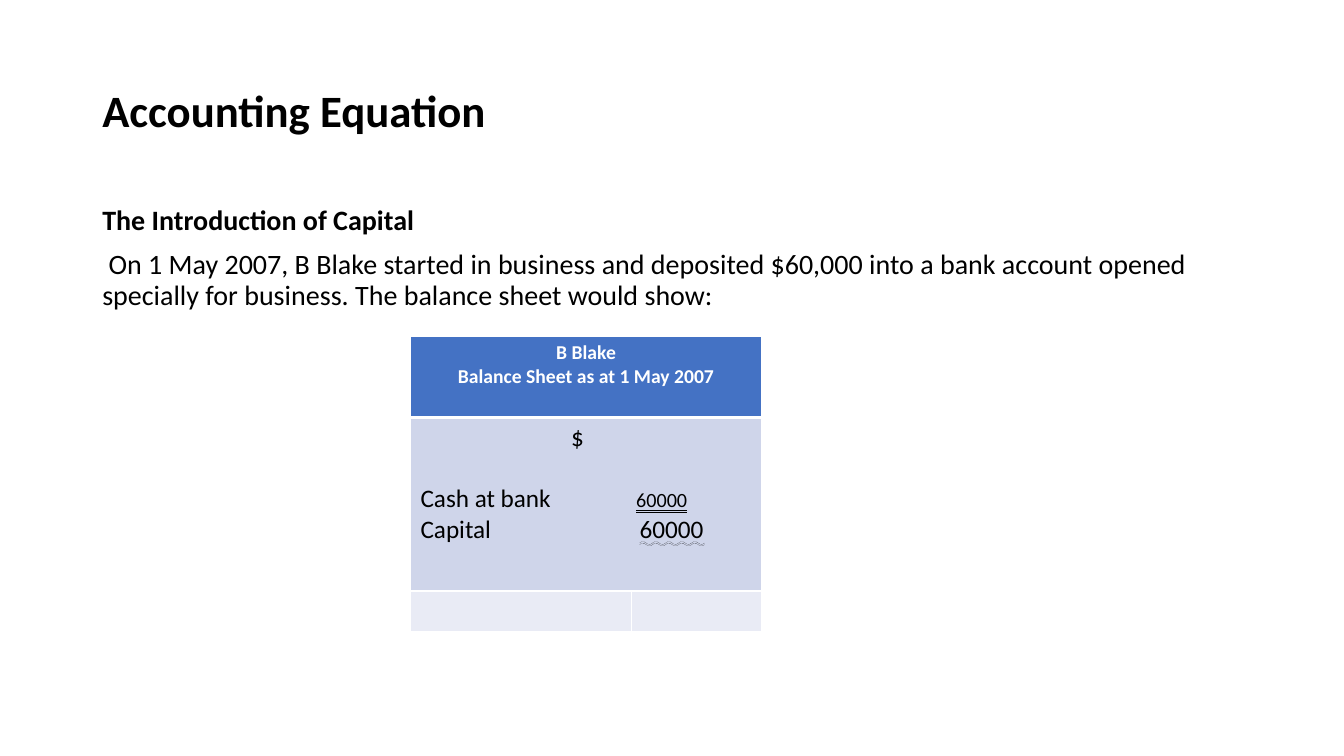
from dataclasses import dataclass

import pptx
import pptx.dml.color
import pptx.enum.text
import pptx.oxml
import pptx.oxml.ns
import pptx.util

Pt = pptx.util.Pt
ALIGN = pptx.enum.text.PP_ALIGN
ANCHOR = pptx.enum.text.MSO_ANCHOR
UNDERLINE = pptx.enum.text.MSO_UNDERLINE
NS = pptx.oxml.ns.nsdecls("a")
WHITE, BLACK = "FFFFFF", "000000"


@dataclass
class Para:
    text: str
    size: float
    bold: bool = False
    color: str = BLACK
    align: ALIGN = ALIGN.LEFT
    line: float = 1.0
    before: float = 0
    after: float = 0
    tab: float = 0
    amount: str = ""
    underline: UNDERLINE = UNDERLINE.NONE
    small_caps: bool = False


@dataclass
class Box:
    left: float
    top: float
    width: float
    height: float
    anchor: ANCHOR
    paras: list[Para]


def rgb(color: str) -> pptx.dml.color.RGBColor:
    return pptx.dml.color.RGBColor.from_string(color)


def write(tf, paras: list[Para]) -> None:
    tf.text = "\n".join(para.text for para in paras)
    for p, para in zip(tf.paragraphs, paras):
        p.alignment = para.align
        p.line_spacing = para.line
        p.space_before, p.space_after = Pt(para.before), Pt(para.after)
        if para.tab:
            p._p.get_or_add_pPr().append(pptx.oxml.parse_xml(
                f'<a:tabLst {NS}><a:tab pos="{Pt(para.tab)}" algn="l"/></a:tabLst>'))
        if para.amount:
            r = p.add_run()
            r.text = para.amount
            r.font.underline = para.underline
            if para.small_caps:
                r._r.get_or_add_rPr().set("cap", "small")
        for r in p.runs:
            r.font.name = "Calibri"
            r.font.size = Pt(para.size)
            r.font.bold = para.bold
            r.font.color.rgb = rgb(para.color)


def add_box(slide, box: Box) -> None:
    sp = slide.shapes.add_textbox(
        Pt(box.left), Pt(box.top), Pt(box.width), Pt(box.height))
    tf = sp.text_frame
    tf.word_wrap = True
    tf.vertical_anchor = box.anchor
    write(tf, box.paras)


def style_cell(cell, fill: str, top: float, bottom: float) -> None:
    tcPr = cell._tc.get_or_add_tcPr()
    for side, width in zip("LRTB", (1, 1, top, bottom)):
        tcPr.append(pptx.oxml.parse_xml(
            f'<a:ln{side} {NS} w="{Pt(width)}"><a:solidFill>'
            f'<a:srgbClr val="{WHITE}"/></a:solidFill></a:ln{side}>'))
    cell.fill.solid()
    cell.fill.fore_color.rgb = rgb(fill)


# Title and body text
BOXES = [
    Box(66, 28.8, 828, 104.4, ANCHOR.MIDDLE, [
        Para("Accounting Equation", 32, bold=True, line=0.9)]),
    Box(66, 144, 828, 342.6, ANCHOR.TOP, [
        Para("The Introduction of Capital", 20, bold=True, line=0.9, before=10),
        Para(" On 1 May 2007, B Blake started in business and deposited $60,000 "
             "into a bank account opened specially for business. "
             "The balance sheet would show:", 20, line=0.9, before=10)]),
]

# Balance sheet
HEADING = [Para(text, 14, True, WHITE, ALIGN.CENTER)
           for text in ("B Blake", "Balance Sheet as at 1 May 2007")]
ENTRIES = [
    Para("\t$", 18, tab=107.5, after=21.6),
    Para("Cash at bank\t", 18, tab=154, amount="60000",
         underline=UNDERLINE.DOUBLE_LINE, small_caps=True),
    Para("Capital\t", 18, tab=156.5, amount="60000",
         underline=UNDERLINE.WAVY_DOUBLE_LINE),
]
COLUMNS = [158.2, 92.8]
# Height, fill, top border, bottom border
ROWS = [(58.3, "4472C4", 1, 3), (123.8, "CFD5EA", 3, 1), (29.2, "E9EBF5", 1, 1)]


def add_balance_sheet(slide) -> None:
    table = slide.shapes.add_table(
        len(ROWS), len(COLUMNS), Pt(293.2), Pt(240),
        Pt(sum(COLUMNS)), Pt(sum(row[0] for row in ROWS))).table
    for column, width in zip(table.columns, COLUMNS):
        column.width = Pt(width)
    for row, (height, fill, top, bottom) in zip(table.rows, ROWS):
        row.height = Pt(height)
        for cell in row.cells:
            style_cell(cell, fill, top, bottom)
    for i, paras in enumerate((HEADING, ENTRIES)):
        table.cell(i, 0).merge(table.cell(i, 1))
        write(table.cell(i, 0).text_frame, paras)


def main() -> None:
    prs = pptx.Presentation()
    prs.slide_width, prs.slide_height = Pt(960), Pt(540)
    slide = prs.slides.add_slide(prs.slide_layouts[6])
    for box in BOXES:
        add_box(slide, box)
    add_balance_sheet(slide)
    prs.save("out.pptx")


if __name__ == "__main__":
    main()
